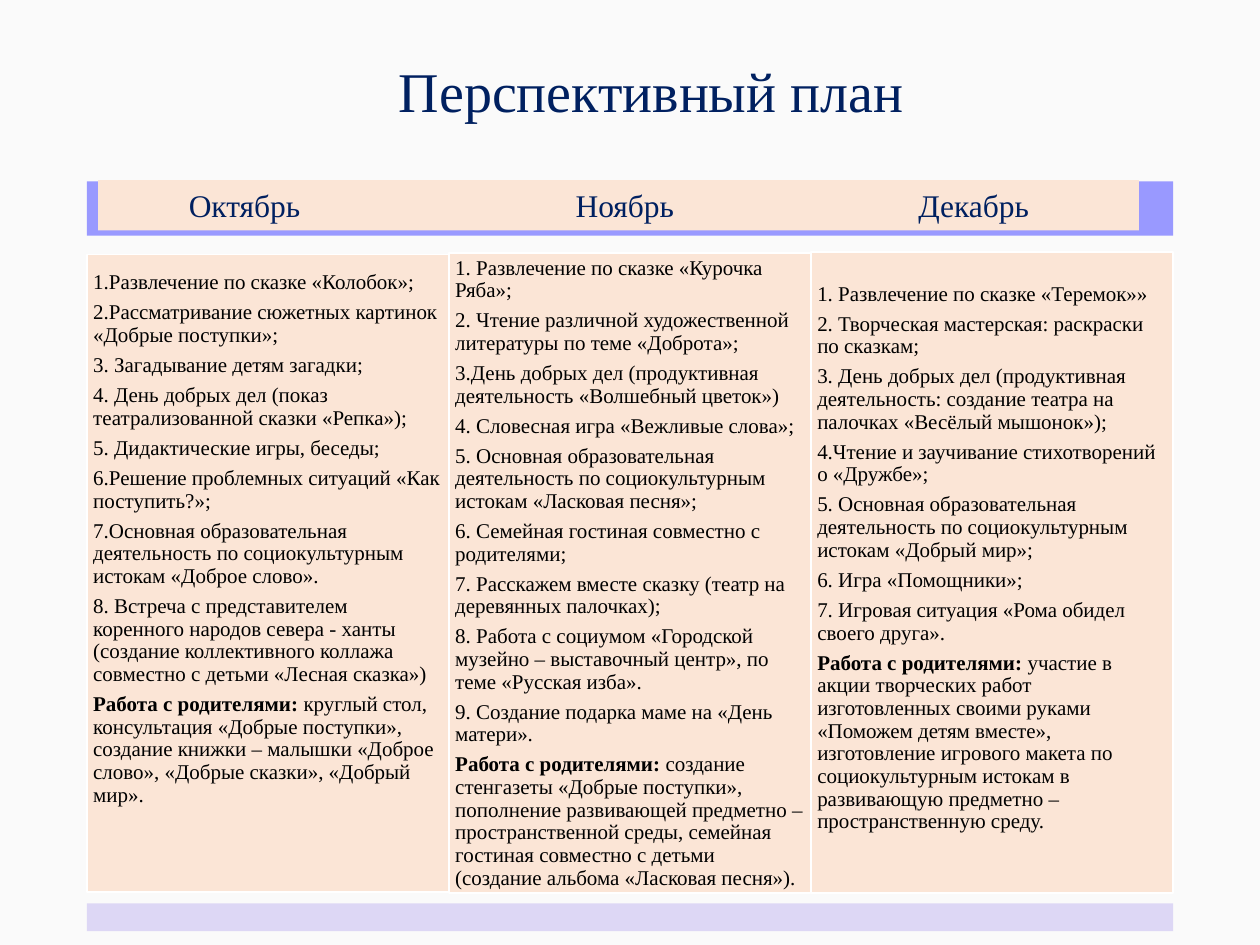
import pptx
import pptx.dml.color
import pptx.enum.shapes
import pptx.enum.text
import pptx.oxml.ns
import pptx.util
from lxml import etree

FONT = "Times New Roman"
NAVY, BLACK, WHITE = "002060", "000000", "FFFFFF"
PEACH, VIOLET, LILAC, PAPER = "FBE5D6", "9999FF", "DDD7F5", "FAFAFA"
LEFT, WIDTH = 6.9, 86.2
PARENTS = "Работа с родителями: "

MONTHS = [
    {
        "name": "Октябрь", "tab": 0.62, "top": 20.2, "height": 50.6, "bottom_inset": 0.59,
        "plan": [
            "1.Развлечение по сказке «Колобок»;",
            "2.Рассматривание сюжетных картинок «Добрые поступки»;",
            "3. Загадывание детям загадки;",
            "4. День добрых дел (показ театрализованной сказки «Репка»);",
            "5. Дидактические игры, беседы;",
            "6.Решение проблемных ситуаций «Как поступить?»;",
            "7.Основная образовательная деятельность по социокультурным истокам «Доброе слово».",
            "8. Встреча с представителем коренного народов севера - ханты (создание "
            "коллективного коллажа совместно с детьми «Лесная сказка»)",
        ],
        "parents": "круглый стол, консультация «Добрые поступки», создание книжки – малышки "
                   "«Доброе слово», «Добрые сказки», «Добрый мир».",
    },
    {
        "name": "Ноябрь", "tab": 3.69, "top": 20.1, "height": 50.8, "bottom_inset": 0.05,
        "plan": [
            "1. Развлечение по сказке «Курочка Ряба»;",
            "2. Чтение различной художественной литературы по теме «Доброта»;",
            "3.День добрых дел (продуктивная деятельность «Волшебный цветок»)",
            "4. Словесная игра «Вежливые слова»;",
            "5. Основная образовательная деятельность по социокультурным истокам «Ласковая песня»;",
            "6. Семейная гостиная совместно с родителями;",
            "7. Расскажем вместе сказку (театр на деревянных палочках);",
            "8. Работа с социумом «Городской музейно – выставочный центр», по теме «Русская изба».",
            "9. Создание подарка маме на «День матери».",
        ],
        "parents": "создание стенгазеты «Добрые поступки», пополнение развивающей предметно – "
                   "пространственной среды, семейная гостиная совместно с детьми "
                   "(создание альбома «Ласковая песня»).",
    },
    {
        "name": "Декабрь", "tab": 6.41, "top": 20, "height": 50.9, "bottom_inset": 0.28,
        "plan": [
            "1. Развлечение по сказке «Теремок»»",
            "2. Творческая мастерская: раскраски по сказкам;",
            "3. День добрых дел (продуктивная деятельность: создание театра на палочках "
            "«Весёлый мышонок»);",
            "4.Чтение и заучивание стихотворений о «Дружбе»;",
            "5. Основная образовательная деятельность по социокультурным истокам «Добрый мир»;",
            "6. Игра «Помощники»;",
            "7. Игровая ситуация «Рома обидел своего друга».",
        ],
        "parents": "участие в акции творческих работ изготовленных своими руками «Поможем детям "
                   "вместе», изготовление игрового макета по социокультурным истокам в "
                   "развивающую предметно – пространственную среду.",
    },
]


def color(value):
    """Turn a hex string into a colour."""
    return pptx.dml.color.RGBColor.from_string(value)


class PlanPage:
    """Style and page, measured on a grid of 100 columns by 75 rows."""

    def __init__(self, deck):
        """Add a title-only page with a plain background."""
        self.column = deck.slide_width / 100
        self.row = deck.slide_height / 75
        self.page = deck.slides.add_slide(deck.slide_layouts[5])
        self.page.background.fill.solid()
        self.page.background.fill.fore_color.rgb = color(PAPER)

    def place(self, left, top, width, height):
        """Convert grid units to slide lengths."""
        return (round(left * self.column), round(top * self.row),
                round(width * self.column), round(height * self.row))

    def add_text(self, para, text, size, ink, bold=False):
        """Add one formatted run to a paragraph."""
        span = para.add_run()
        span.text = text
        span.font.name = FONT
        span.font.size = pptx.util.Pt(size)
        span.font.bold = bold
        span.font.color.rgb = color(ink)

    def title(self, text, *area):
        """Move and fill the title placeholder."""
        box = self.page.shapes.title
        box.left, box.top, box.width, box.height = self.place(*area)
        frame = box.text_frame
        frame.auto_size = pptx.enum.text.MSO_AUTO_SIZE.NONE
        frame.vertical_anchor = pptx.enum.text.MSO_ANCHOR.MIDDLE
        para = frame.paragraphs[0]
        para.alignment = pptx.enum.text.PP_ALIGN.CENTER
        para.line_spacing = 0.9
        self.add_text(para, text, 32, NAVY)

    def bar(self, fill, *area, outline=None):
        """Draw a flat rectangle, with an outline if asked."""
        box = self.page.shapes.add_shape(
            pptx.enum.shapes.MSO_SHAPE.RECTANGLE, *self.place(*area))
        box.shadow.inherit = False
        box.fill.solid()
        box.fill.fore_color.rgb = color(fill)
        if outline:
            box.line.color.rgb = color(outline)
            box.line.width = pptx.util.Pt(1)
        else:
            box.line.fill.background()
        return box

    def month_card(self, index, month):
        """Draw one month's column with its plan and work with parents."""
        width = WIDTH / len(MONTHS)
        box = self.bar(PEACH, LEFT + index * width, month["top"], width, month["height"],
                       outline=WHITE)
        frame = box.text_frame
        frame.word_wrap = True
        frame.vertical_anchor = pptx.enum.text.MSO_ANCHOR.MIDDLE
        frame.margin_left = frame.margin_right = frame.margin_top = pptx.util.Inches(0.05)
        frame.margin_bottom = pptx.util.Inches(month["bottom_inset"])
        for number, text in enumerate(month["plan"] + [month["parents"]]):
            para = frame.add_paragraph() if number else frame.paragraphs[0]
            para.alignment = pptx.enum.text.PP_ALIGN.LEFT
            para.line_spacing = 0.9
            para.space_after = pptx.util.Pt(4.2)
            if number == len(month["plan"]):
                self.add_text(para, PARENTS, 12, BLACK, bold=True)
            self.add_text(para, text, 12, BLACK)

    def month_header(self, *area):
        """Draw the strip with month names set on tab stops."""
        frame = self.bar(PEACH, *area).text_frame
        frame.word_wrap = True
        frame.vertical_anchor = pptx.enum.text.MSO_ANCHOR.TOP
        para = frame.paragraphs[0]
        para.alignment = pptx.enum.text.PP_ALIGN.LEFT
        qn = pptx.oxml.ns.qn
        stops = etree.SubElement(para._p.get_or_add_pPr(), qn("a:tabLst"))
        for month in MONTHS:
            etree.SubElement(stops, qn("a:tab"), pos=str(pptx.util.Inches(month["tab"])), algn="l")
            self.add_text(para, "\t" + month["name"], 18, NAVY)


def main():
    """Build and save the plan."""
    deck = pptx.Presentation()
    deck.slide_width = pptx.util.Inches(10)
    deck.slide_height = pptx.util.Inches(7.5)
    plan = PlanPage(deck)
    plan.title("Перспективный план", 8.6, 5.2, 86.2, 4.6)
    plan.bar(VIOLET, LEFT, 14.4, WIDTH, 4.3)
    for index, month in enumerate(MONTHS):
        plan.month_card(index, month)
    plan.bar(LILAC, LEFT, 71.7, WIDTH, 2.2)
    plan.month_header(7.8, 14.3, 82.6, 4)
    deck.save("out.pptx")


if __name__ == "__main__":
    main()
